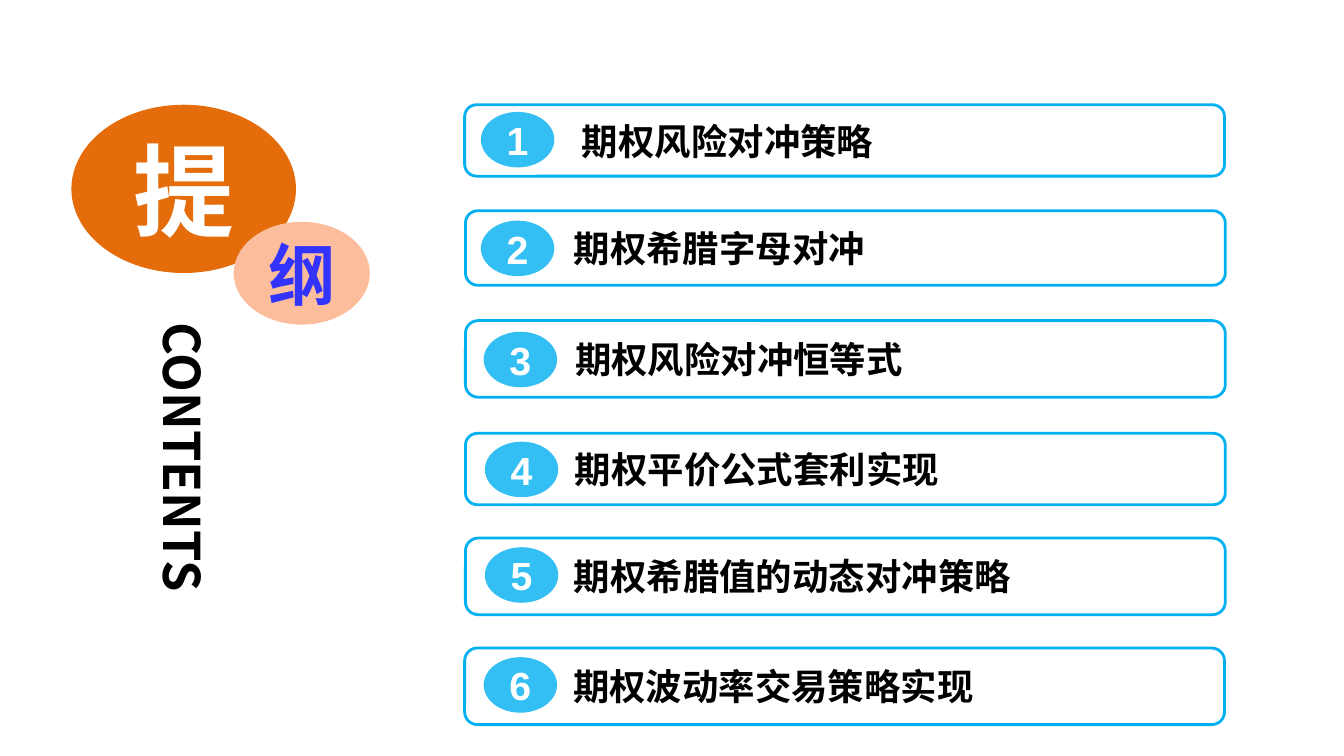
"""Build the contents slide: a two-circle title and six numbered topics."""
import lxml.etree
import pptx
import pptx.dml.color
import pptx.enum.shapes
import pptx.enum.text
import pptx.oxml.ns
import pptx.util

Cm = pptx.util.Cm
Pt = pptx.util.Pt
SHAPES = pptx.enum.shapes.MSO_SHAPE
ALIGN = pptx.enum.text.PP_ALIGN
HEADING_FONT = "Noto Sans CJK SC"
COLOURS = {
    "white": "FFFFFF",
    "black": "000000",
    "sky": "00B0F0",
    "orange": "E46C0A",
    "peach": "FBBD9B",
    "blue": "3333FF",
}


def add_filled_shape(kind, left, top, width, height, fill):
    shape = slide.shapes.add_shape(kind, Cm(left), Cm(top), Cm(width), Cm(height))
    shape.shadow.inherit = False
    shape.fill.solid()
    shape.fill.fore_color.rgb = pptx.dml.color.RGBColor.from_string(COLOURS[fill])
    shape.line.fill.background()
    return shape


def write_text(shape, text, size, colour, font_name, alignment, left_inset=0):
    frame = shape.text_frame
    frame.vertical_anchor = pptx.enum.text.MSO_ANCHOR.MIDDLE
    frame.margin_left = Cm(left_inset)
    frame.margin_top = frame.margin_right = frame.margin_bottom = 0
    paragraph = frame.paragraphs[0]
    paragraph.alignment = alignment
    run = paragraph.add_run()
    run.text = text
    run.font.size = Pt(size)
    run.font.bold = True
    run.font.color.rgb = pptx.dml.color.RGBColor.from_string(COLOURS[colour])
    run.font.name = font_name
    east_asian = lxml.etree.SubElement(run.font._element, pptx.oxml.ns.qn("a:ea"))
    east_asian.set("typeface", font_name)


presentation = pptx.Presentation()
presentation.slide_width = Cm(33.87)
presentation.slide_height = Cm(19.05)
slide = presentation.slides.add_slide(presentation.slide_layouts[6])

title_circles = [
    ("提", 1.8, 2.64, 5.66, 4.24, "orange", 72, "white"),
    ("纲", 5.89, 5.59, 3.43, 2.59, "peach", 48, "blue"),
]
for text, left, top, width, height, fill, size, colour in title_circles:
    circle = add_filled_shape(SHAPES.OVAL, left, top, width, height, fill)
    write_text(circle, text, size, colour, HEADING_FONT, ALIGN.CENTER)

contents = slide.shapes.add_textbox(Cm(3.51), Cm(8.13), Cm(2.26), Cm(7.62))
contents.text_frame.word_wrap = True
write_text(contents, "CONTENTS", 36, "black", HEADING_FONT, ALIGN.LEFT)
contents.text_frame._txBody.bodyPr.set("vert", "eaVert")

topics = [
    ("期权风险对冲策略", 11.71, 2.64, 1.8, 2.87, 12.12, 2.82),
    ("期权希腊字母对冲", 11.73, 5.31, 1.88, 2.64, 12.12, 5.56),
    ("期权风险对冲恒等式", 11.73, 8.08, 1.93, 2.67, 12.19, 8.36),
    ("期权平价公式套利实现", 11.73, 10.92, 1.8, 2.67, 12.22, 11.13),
    ("期权希腊值的动态对冲策略", 11.73, 13.56, 1.93, 2.64, 12.22, 13.79),
    ("期权波动率交易策略实现", 11.71, 16.33, 1.93, 2.64, 12.19, 16.56),
]
for number, topic in enumerate(topics, start=1):
    text, left, top, height, inset, badge_left, badge_top = topic
    box = add_filled_shape(SHAPES.ROUNDED_RECTANGLE, left, top, 19.15, height, "white")
    box.line.color.rgb = pptx.dml.color.RGBColor.from_string(COLOURS["sky"])
    box.line.width = Pt(2)
    write_text(box, text, 26, "black", HEADING_FONT, ALIGN.LEFT, inset)

    badge = add_filled_shape(SHAPES.OVAL, badge_left, badge_top, 1.85, 1.4, "sky")
    badge_colour = badge._element.spPr.find(".//" + pptx.oxml.ns.qn("a:srgbClr"))
    alpha = lxml.etree.SubElement(badge_colour, pptx.oxml.ns.qn("a:alpha"))
    alpha.set("val", "80000")
    badge.text_frame.word_wrap = False
    write_text(badge, str(number), 28, "white", "Arial", ALIGN.CENTER)

presentation.save("out.pptx")
